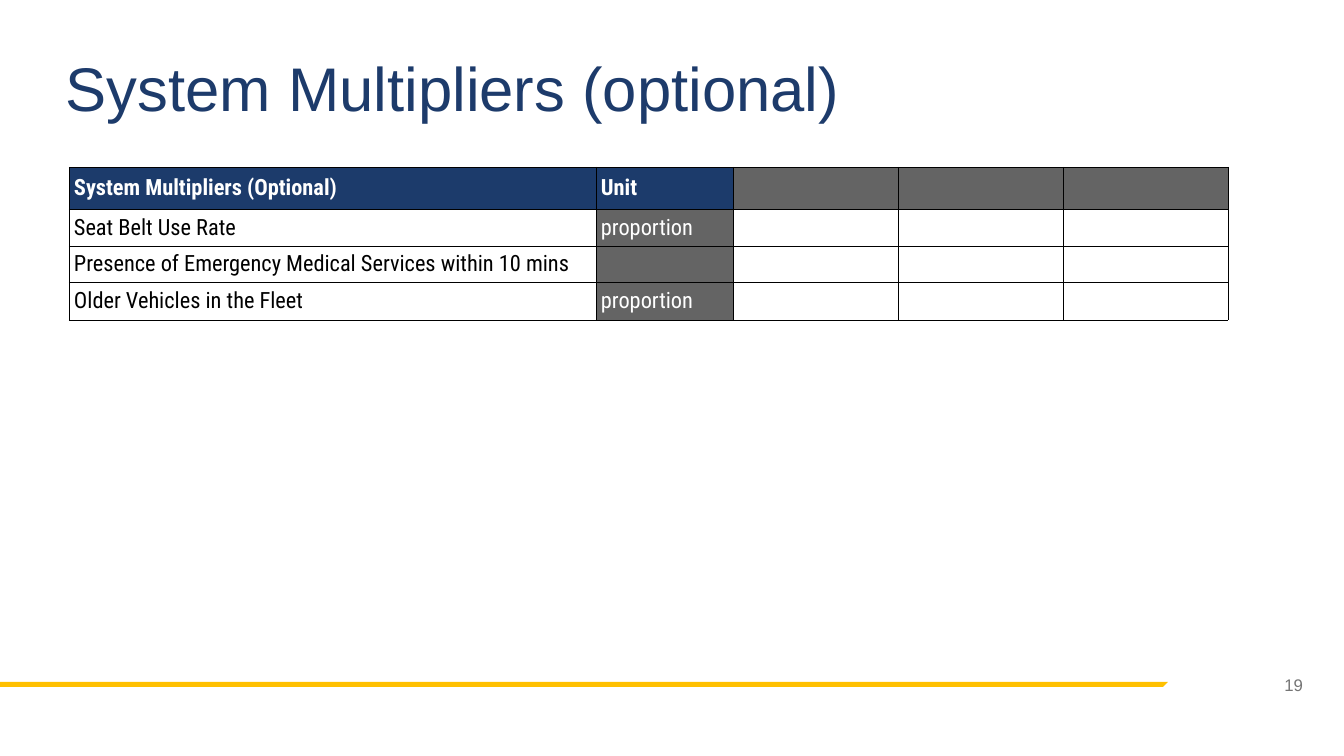
from lxml.etree import SubElement
from pptx import Presentation
from pptx.dml.color import RGBColor
from pptx.enum.text import MSO_ANCHOR, PP_ALIGN
from pptx.oxml.ns import qn
from pptx.util import Pt

EMU_PER_PX = 914400 / 100.8
TITLE_BLUE = RGBColor(0x1D, 0x3B, 0x6B)
HEADER_BLUE = RGBColor(0x1C, 0x3B, 0x6B)
GOLD = RGBColor(0xFF, 0xC0, 0x00)
DARK_GRAY = RGBColor(0x64, 0x64, 0x64)
NUMBER_GRAY = RGBColor(0x75, 0x75, 0x75)
WHITE = RGBColor(0xFF, 0xFF, 0xFF)
BLACK = RGBColor(0x00, 0x00, 0x00)

COLUMN_WIDTHS = [527, 137, 165, 165, 165]
ROW_HEIGHTS = [42, 37, 36, 38]
MULTIPLIERS = [
    ("System Multipliers (Optional)", "Unit"),
    ("Seat Belt Use Rate", "proportion"),
    ("Presence of Emergency Medical Services within 10 mins", ""),
    ("Older Vehicles in the Fleet", "proportion"),
]


def px(length):
    """Turn pixels into EMU."""
    return round(length * EMU_PER_PX)


def style_paragraph(paragraph, font_name, size, color, bold=False):
    """Set the font of a whole paragraph."""
    font = paragraph.font
    font.name, font.size, font.bold = font_name, Pt(size), bold
    font.color.rgb = color


def add_label(slide, box, text, size, color, alignment=PP_ALIGN.LEFT, line_spacing=1.0):
    """Place one vertically centred line of text in a box."""
    frame = slide.shapes.add_textbox(*map(px, box)).text_frame
    frame.word_wrap = True
    frame.vertical_anchor = MSO_ANCHOR.MIDDLE
    paragraph = frame.paragraphs[0]
    paragraph.text = text
    paragraph.alignment = alignment
    paragraph.line_spacing = line_spacing
    style_paragraph(paragraph, "Arial", size, color)


def add_footer_bar(slide, box):
    """Draw the gold bar with its slanted right end."""
    left, top, width, height = box
    right, bottom = left + width, top + height
    builder = slide.shapes.build_freeform(left, top, scale=EMU_PER_PX)
    builder.add_line_segments([(right, top), (right - height, bottom), (left, bottom)])
    bar = builder.convert_to_shape()
    bar.shadow.inherit = False
    bar.fill.solid()
    bar.fill.fore_color.rgb = GOLD
    bar.line.fill.background()


def add_borders(cell):
    """Give a cell thin black borders on all sides."""
    properties = cell._tc.get_or_add_tcPr()
    for side in ("a:lnL", "a:lnR", "a:lnT", "a:lnB"):
        line = SubElement(properties, qn(side), w=str(Pt(0.25)))
        fill = SubElement(line, qn("a:solidFill"))
        SubElement(fill, qn("a:srgbClr"), val=str(BLACK))


def cell_colors(row, column):
    """Return the fill and font colours of a table cell."""
    if row == 0:
        return (HEADER_BLUE if column < 2 else DARK_GRAY), WHITE
    return (DARK_GRAY, WHITE) if column == 1 else (WHITE, BLACK)


def add_multiplier_table(slide, left, top):
    """Build the table of system multipliers from its top left corner."""
    box = (left, top, sum(COLUMN_WIDTHS), sum(ROW_HEIGHTS))
    table = slide.shapes.add_table(
        len(ROW_HEIGHTS), len(COLUMN_WIDTHS), *map(px, box)
    ).table
    table.first_row = table.horz_banding = False
    for column, width in zip(table.columns, COLUMN_WIDTHS):
        column.width = px(width)
    for row_index, (row, height) in enumerate(zip(table.rows, ROW_HEIGHTS)):
        row.height = px(height)
        for column_index, cell in enumerate(row.cells):
            fill_color, font_color = cell_colors(row_index, column_index)
            add_borders(cell)
            cell.fill.solid()
            cell.fill.fore_color.rgb = fill_color
            cell.vertical_anchor = MSO_ANCHOR.MIDDLE
            cell.margin_left = cell.margin_right = px(5)
            cell.margin_top = cell.margin_bottom = 0
            if column_index < len(MULTIPLIERS[row_index]):
                cell.text = MULTIPLIERS[row_index][column_index]
            style_paragraph(
                cell.text_frame.paragraphs[0],
                "Roboto Condensed", 16, font_color, row_index == 0,
            )


def main():
    """Build the slide and save it."""
    presentation = Presentation()
    presentation.slide_width, presentation.slide_height = px(1344), px(756)
    slide = presentation.slides.add_slide(presentation.slide_layouts[6])
    add_footer_bar(slide, (0, 682, 1168, 5))
    add_label(slide, (56, 35, 1159, 113), "System Multipliers (optional)",
              44, TITLE_BLUE, line_spacing=0.9)
    add_label(slide, (1229, 672, 84, 26), "19", 12, NUMBER_GRAY, PP_ALIGN.RIGHT)
    add_multiplier_table(slide, 69, 167)
    presentation.save("out.pptx")


if __name__ == "__main__":
    main()
